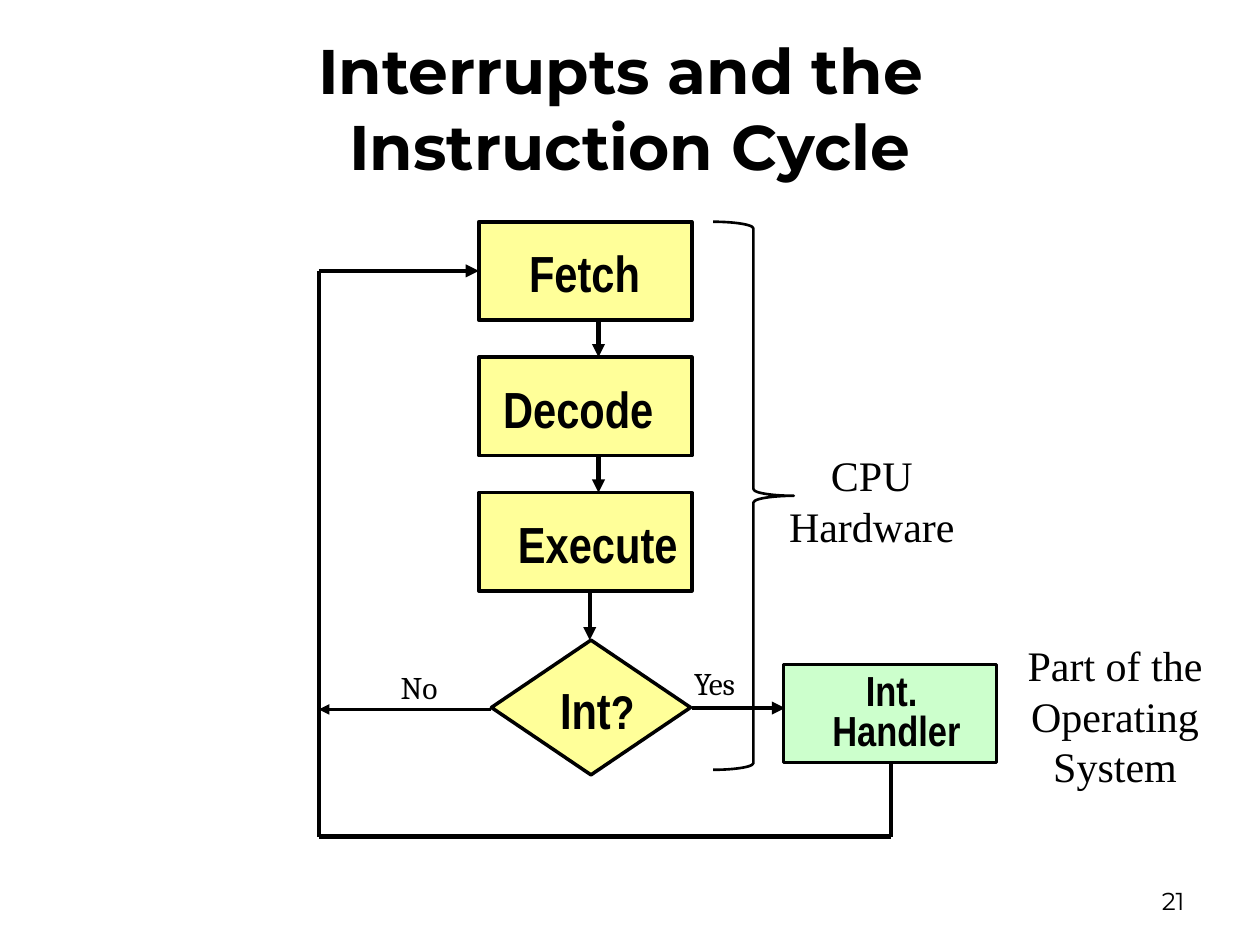
from lxml.etree import SubElement
from pptx import Presentation
from pptx.dml.color import RGBColor
from pptx.enum.shapes import MSO_CONNECTOR, MSO_SHAPE
from pptx.enum.text import MSO_ANCHOR, PP_ALIGN
from pptx.oxml.ns import qn
from pptx.util import Pt

BLACK, YELLOW, GREEN = "000000", "FFFF99", "CCFFCC"
TITLE = {"name": "Montserrat", "size": Pt(36), "bold": True}
NUMBER = {"name": "Montserrat", "size": Pt(14)}
STEP = {"name": "Arial Narrow", "size": Pt(29), "bold": True}
HANDLER = {"name": "Arial Narrow", "size": Pt(24), "bold": True}
NOTE = {"name": "Times New Roman", "size": Pt(24)}
BRANCH = {"name": "Cambria", "size": Pt(18)}
NARROW, WIDE = (7.2, 3.6), (8.64, 4.32)


def color(value):
    return RGBColor.from_string(value)


class Diagram:
    def __init__(self, slide):
        self.slide = slide

    def text(self, box, runs, align=PP_ALIGN.CENTER, anchor=MSO_ANCHOR.TOP,
             insets=WIDE, spacing=None):
        shape = self.slide.shapes.add_textbox(*map(Pt, box))
        side, edge = map(Pt, insets)
        frame_format = {"word_wrap": True, "vertical_anchor": anchor,
                        "margin_left": side, "margin_right": side,
                        "margin_top": edge, "margin_bottom": edge}
        for key, value in frame_format.items():
            setattr(shape.text_frame, key, value)
        paragraph = shape.text_frame.paragraphs[0]
        paragraph.alignment = align
        paragraph.line_spacing = spacing
        for content, font_format in runs:
            for index, line in enumerate(content.split("\n")):
                if index:
                    paragraph.add_line_break()
                run = paragraph.add_run()
                run.text = line
                for key, value in font_format.items():
                    setattr(run.font, key, value)
                run.font.color.rgb = color(BLACK)

    def shape(self, kind, box, fill=None, weight=2):
        shape = self.slide.shapes.add_shape(kind, *map(Pt, box))
        shape.shadow.inherit = False
        if fill:
            shape.fill.solid()
            shape.fill.fore_color.rgb = color(fill)
        else:
            shape.fill.background()
        shape.line.color.rgb = color(BLACK)
        shape.line.width = Pt(weight)

    def line(self, start, end, arrow=False, weight=2.5):
        connector = self.slide.shapes.add_connector(
            MSO_CONNECTOR.STRAIGHT, *map(Pt, start + end))
        connector.line.color.rgb = color(BLACK)
        connector.line.width = Pt(weight)
        if arrow:
            outline = connector.line._get_or_add_ln()
            SubElement(outline, qn("a:tailEnd"), type="triangle")
        SubElement(connector._element.spPr, qn("a:effectLst"))


def main():
    presentation = Presentation()
    presentation.slide_width, presentation.slide_height = Pt(720), Pt(540)
    slide = presentation.slides.add_slide(presentation.slide_layouts[6])
    diagram = Diagram(slide)

    # Title and slide number
    diagram.text((52.6, 32.4, 614.2, 57.6),
                 [("Interrupts and the \nInstruction Cycle", TITLE)],
                 anchor=MSO_ANCHOR.MIDDLE, insets=NARROW)
    diagram.text((516.2, 500.4, 167.8, 28.8), [("21", NUMBER)],
                 PP_ALIGN.RIGHT, MSO_ANCHOR.MIDDLE, NARROW)

    # Cycle steps, each with its label and the arrow to the next
    left, top, width, height, pitch = 273.6, 126.7, 121.7, 56.2, 77.4
    decision_top = 365.8
    steps = [("Fetch", 280.8, 106.6, 342),
             ("Decode", 273.6, 113.8, 342),
             ("Execute", 280.8, 121.7, 337)]
    for index, (name, text_left, text_width, arrow_x) in enumerate(steps):
        step_top = top + index * pitch
        last = index == len(steps) - 1
        arrow_end = decision_top if last else step_top + pitch
        diagram.shape(MSO_SHAPE.FLOWCHART_PROCESS,
                      (left, step_top, width, height), YELLOW)
        diagram.line((arrow_x, step_top + height), (arrow_x, arrow_end), True)
        diagram.text((text_left, step_top + 7.2, text_width, 42.5),
                     [(name, STEP)])

    # Interrupt test and handler
    diagram.shape(MSO_SHAPE.FLOWCHART_DECISION,
                  (280.8, decision_top, 113.8, 77), YELLOW)
    diagram.text((288, 383.8, 106.6, 42.5),
                 [("Int", STEP), ("?", {**STEP, "size": Pt(27)})])
    diagram.shape(MSO_SHAPE.FLOWCHART_PROCESS,
                  (447.8, 379.6, width, height), GREEN)
    diagram.text((447.8, 380.9, 128.9, 53.3), [("Int. \nHandler", HANDLER)],
                 spacing=0.8)

    # Branches and the way back to Fetch
    loop_x, fetch_y, bottom_y, handler_x = 182.2, 154.8, 478.1, 509
    diagram.line((loop_x, fetch_y), (left, fetch_y), True)
    diagram.line((280.8, 405.4), (loop_x, 405.4), True, 2)
    diagram.line((395.3, 404.6), (448.6, 404.6), True)
    diagram.line((handler_x, 436), (handler_x, bottom_y))
    diagram.line((handler_x, bottom_y), (loop_x, bottom_y))
    diagram.line((loop_x, bottom_y), (loop_x, 401))
    diagram.line((loop_x, fetch_y), (loop_x, 401))
    for name, box in [("No", (221.8, 378, 41.8, 28.8)),
                      ("Yes", (389.5, 375.8, 54, 28.8))]:
        diagram.text(box, [(name, BRANCH)], PP_ALIGN.LEFT, insets=NARROW)

    # Who does what
    diagram.shape(MSO_SHAPE.RIGHT_BRACE, (407.5, top, 46.1, 313.2), weight=1.5)
    for note, box in [("CPU Hardware", (426.2, 252.7, 144, 67)),
                      ("Part of the Operating System", (565.2, 361.4, 144, 92.9))]:
        diagram.text(box, [(note, NOTE)])

    presentation.save("out.pptx")


if __name__ == "__main__":
    main()
